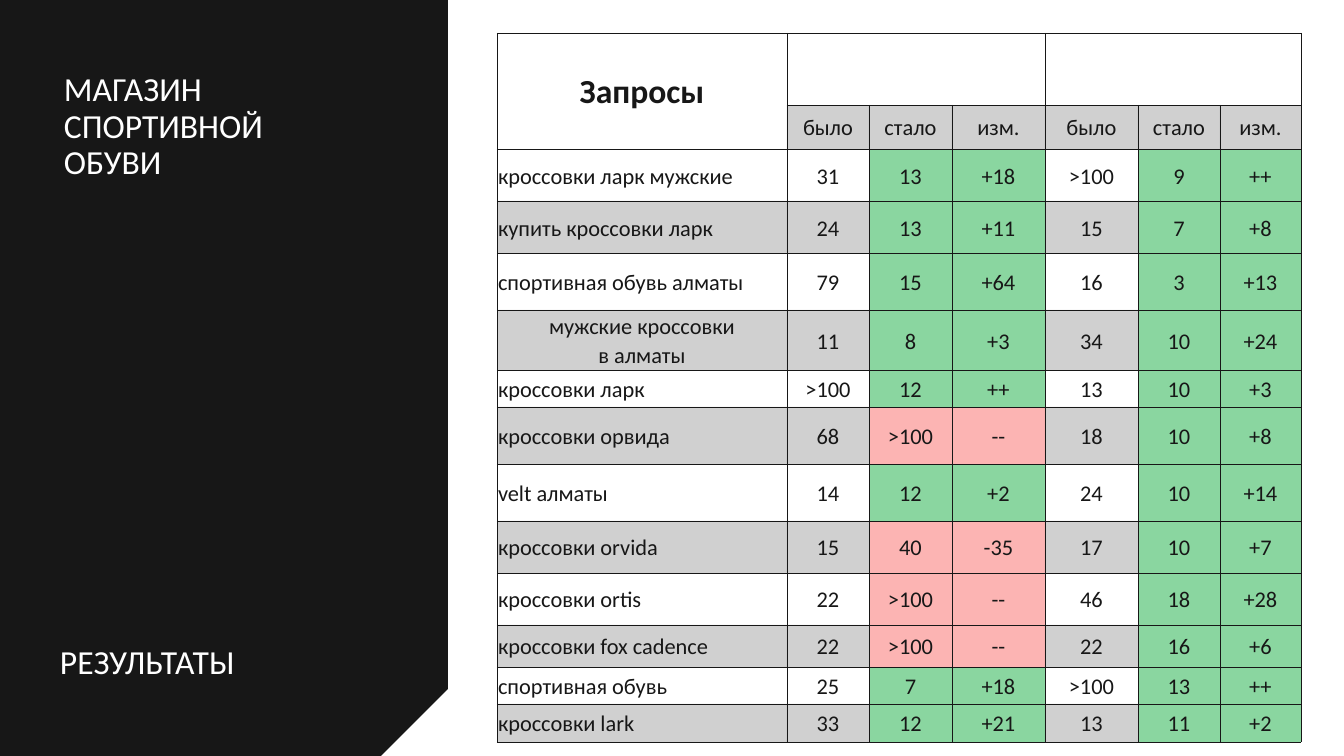
from lxml import etree
from pptx import Presentation
from pptx import util as u
from pptx.dml import color
from pptx.enum import text as t
from pptx.oxml import ns

UNIT = 914400 / 100.8
DARK, WHITE, GOOD, BAD = "171717", "FFFFFF", "8AD6A0", "FCB4B3"
COLS = [290, 82, 83, 93, 93, 82, 81]
ROWS = [72, 44, 52, 52, 57, 60, 37, 57, 57, 52, 52, 42, 37, 38]
HEAD = ["было", "стало", "изм."]
DATA = [
    ["кроссовки ларк мужские", "31", "13", "+18", ">100", "9", "++"],
    ["купить кроссовки ларк", "24", "13", "+11", "15", "7", "+8"],
    ["спортивная обувь алматы", "79", "15", "+64", "16", "3", "+13"],
    ["мужские кроссовки\nв алматы", "11", "8", "+3", "34", "10", "+24"],
    ["кроссовки ларк", ">100", "12", "++", "13", "10", "+3"],
    ["кроссовки орвида", "68", ">100", "--", "18", "10", "+8"],
    ["velt алматы", "14", "12", "+2", "24", "10", "+14"],
    ["кроссовки orvida", "15", "40", "-35", "17", "10", "+7"],
    ["кроссовки ortis", "22", ">100", "--", "46", "18", "+28"],
    ["кроссовки fox cadence", "22", ">100", "--", "22", "16", "+6"],
    ["спортивная обувь", "25", "7", "+18", ">100", "13", "++"],
    ["кроссовки lark", "33", "12", "+21", "13", "11", "+2"],
]


def px(num):
    """Turn pixels into EMU."""
    return u.Emu(round(num * UNIT))


def rgb(code):
    """Turn a hex string into a colour."""
    return color.RGBColor.from_string(code)


def put(obj, form):
    """Set every attribute named in a dict."""
    for name, value in form.items():
        setattr(obj, name, value)


def write(par, words, size, ink, bold, form):
    """Fill a paragraph with styled text."""
    par.text = words
    put(par, form)
    for run in par.runs:
        put(run.font, {"name": "Calibri", "size": u.Pt(size), "bold": bold})
        run.font.color.rgb = rgb(ink)


def shade(cell, fill):
    """Paint a cell, with the dark tone at one fifth strength."""
    if not fill:
        cell.fill.background()
        return
    cell.fill.solid()
    cell.fill.fore_color.rgb = rgb(fill)
    if fill == DARK:
        tone = cell._tc.tcPr.find(".//" + ns.qn("a:srgbClr"))
        etree.SubElement(tone, ns.qn("a:alpha"), val="20000")


def frame(cell):
    """Draw thin dark borders on all four sides of a cell."""
    for spot, side in enumerate(["lnL", "lnR", "lnT", "lnB"]):
        line = etree.Element(ns.qn("a:" + side), w=str(u.Pt(0.25)))
        fill = etree.SubElement(line, ns.qn("a:solidFill"))
        etree.SubElement(fill, ns.qn("a:srgbClr"), val=DARK)
        cell._tc.tcPr.insert(spot, line)


def tint(row, col, line):
    """Choose the fill of a cell from its place and its change value."""
    if row == 0 or (row == 1 and col == 0):
        return None
    if row > 1 and col in (2, 3, 5, 6):
        change = line[3 if col < 4 else 6]
        return BAD if change.startswith("-") else GOOD
    return DARK if row % 2 else None


def label(slide, words, left, top, wide, high):
    """Place a white caption in the given box."""
    body = slide.shapes.add_textbox(*map(px, (left, top, wide, high))).text_frame
    body.word_wrap = True
    write(body.paragraphs[0], words, 24, WHITE, False, {"line_spacing": 0.9})


def panel(slide, left, top, wide, high):
    """Draw the dark side panel with a cut corner and its captions."""
    cut = 67
    right, base = left + wide, top + high
    pen = slide.shapes.build_freeform(left, top, scale=UNIT)
    pen.add_line_segments([(right, top), (right, base - cut), (right - cut, base), (left, base)])
    side = pen.convert_to_shape()
    side.shadow.inherit = False
    side.fill.solid()
    side.fill.fore_color.rgb = rgb(DARK)
    side.line.fill.background()
    label(slide, "МАГАЗИН\nСПОРТИВНОЙ\nОБУВИ", left + 54, top + 68, 416, 99)
    label(slide, "РЕЗУЛЬТАТЫ", left + 50, top + 640, 416, 99)


def grid(slide, left, top):
    """Build the table of search positions."""
    box = map(px, (left, top, sum(COLS), sum(ROWS)))
    table = slide.shapes.add_table(len(ROWS), len(COLS), *box).table
    put(table, {"first_row": False, "horz_banding": False})
    for col, wide in zip(table.columns, COLS):
        col.width = px(wide)
    for row, high in zip(table.rows, ROWS):
        row.height = px(high)
    lines = [["Запросы"] + [""] * 6, [""] + HEAD * 2] + DATA
    for row, line in enumerate(lines):
        for col, words in enumerate(line):
            cell = table.cell(row, col)
            edge = px(7 if row < 2 else 1)
            put(cell, {"margin_left": edge, "margin_right": edge, "margin_bottom": 0,
                       "margin_top": px(0 if row < 2 else 1),
                       "vertical_anchor": t.MSO_ANCHOR.MIDDLE})
            flush = row > 1 and col == 0 and "\n" not in words
            align = t.PP_ALIGN.LEFT if flush else t.PP_ALIGN.CENTER
            title = row == 0
            write(cell.text_frame.paragraphs[0], words, 24 if title else 16, DARK, title,
                  {"alignment": align, "line_spacing": 1.07, "space_after": u.Pt(8)})
            shade(cell, tint(row, col, line))
            frame(cell)
    for start, end in [((0, 0), (1, 0)), ((0, 1), (0, 3)), ((0, 4), (0, 6))]:
        table.cell(*start).merge(table.cell(*end))


def main():
    """Build and save the slide."""
    deck = Presentation()
    put(deck, {"slide_width": px(1344), "slide_height": px(756)})
    slide = deck.slides.add_slide(deck.slide_layouts[6])
    panel(slide, 0, 0, 448, 756)
    grid(slide, 497, 33)
    deck.save("out.pptx")


if __name__ == "__main__":
    main()
